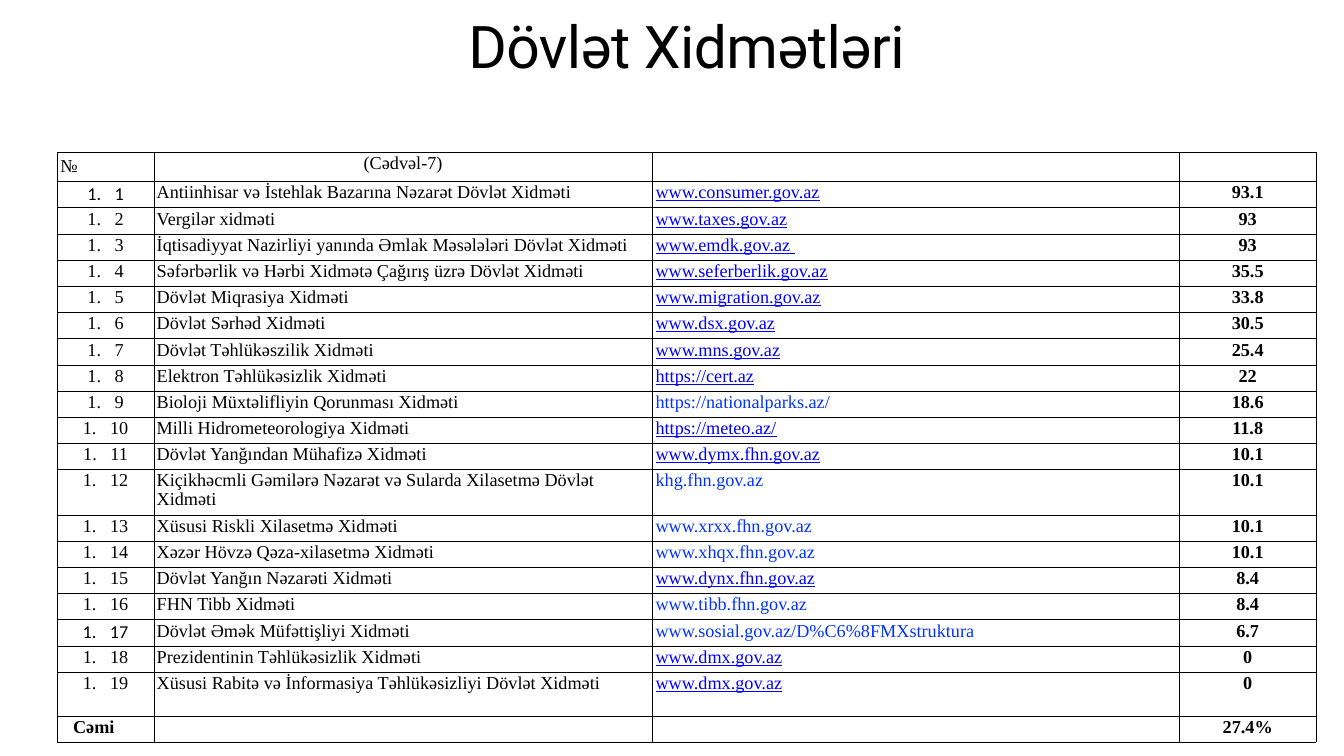
from lxml import etree
from pptx import Presentation
from pptx import util as u
from pptx.dml.color import RGBColor
from pptx.enum import text
from pptx.oxml import ns

WIDTH, HEIGHT = 26.67, 15
TITLE = "Dövlət Xidmətləri"
HEADER = ("№", "(Cədvəl-7)")
TOTAL = ("Cəmi", "27.4%")
# service, site, is the site underlined, score
SERVICES = [
    ("Antiinhisar və İstehlak Bazarına Nəzarət Dövlət Xidməti", "www.consumer.gov.az", True, "93.1"),
    ("Vergilər xidməti", "www.taxes.gov.az", True, "93"),
    ("İqtisadiyyat Nazirliyi yanında Əmlak Məsələləri Dövlət Xidməti", "www.emdk.gov.az ", True, "93"),
    ("Səfərbərlik və Hərbi Xidmətə Çağırış üzrə Dövlət Xidməti", "www.seferberlik.gov.az", True, "35.5"),
    ("Dövlət Miqrasiya Xidməti", "www.migration.gov.az", True, "33.8"),
    ("Dövlət Sərhəd Xidməti", "www.dsx.gov.az", True, "30.5"),
    ("Dövlət Təhlükəszilik Xidməti", "www.mns.gov.az", True, "25.4"),
    ("Elektron Təhlükəsizlik Xidməti", "https://cert.az", True, "22"),
    ("Bioloji Müxtəlifliyin Qorunması Xidməti", "https://nationalparks.az/", False, "18.6"),
    ("Milli Hidrometeorologiya Xidməti", "https://meteo.az/", True, "11.8"),
    ("Dövlət Yanğından Mühafizə Xidməti", "www.dymx.fhn.gov.az", True, "10.1"),
    ("Kiçikhəcmli Gəmilərə Nəzarət və Sularda Xilasetmə Dövlət Xidməti", "khg.fhn.gov.az", False, "10.1"),
    ("Xüsusi Riskli Xilasetmə Xidməti", "www.xrxx.fhn.gov.az", False, "10.1"),
    ("Xəzər Hövzə Qəza-xilasetmə Xidməti", "www.xhqx.fhn.gov.az", False, "10.1"),
    ("Dövlət Yanğın Nəzarəti Xidməti", "www.dynx.fhn.gov.az", True, "8.4"),
    ("FHN Tibb Xidməti", "www.tibb.fhn.gov.az", False, "8.4"),
    ("Dövlət Əmək Müfəttişliyi Xidməti", "www.sosial.gov.az/D%C6%8FMXstruktura", False, "6.7"),
    ("Prezidentinin Təhlükəsizlik Xidməti", "www.dmx.gov.az", True, "0"),
    ("Xüsusi Rabitə və İnformasiya Təhlükəsizliyi Dövlət Xidməti", "www.dmx.gov.az", True, "0"),
]
CALIBRI_NUMBERS = (1, 17)
COLUMNS = (1.91, 9.9, 10.45, 2.72)
ROW, TALL_ROW = 0.52, 0.87
INSET = 0.06
CENTER = text.PP_ALIGN.CENTER


def rgb(value):
    return RGBColor.from_string(value)


def write(tf, words, color="000000", align=None, spacing=0.9, **font):
    p = tf.paragraphs[0]
    p.alignment, p.line_spacing = align, spacing
    r = p.add_run()
    r.text = words
    for name, value in {"name": "Times New Roman", "size": u.Pt(26), **font}.items():
        setattr(r.font, name, value)
    r.font.color.rgb = rgb(color)
    return p


def indent(p, left, first=0):
    pPr = p._p.get_or_add_pPr()
    pPr.set("marL", str(u.Inches(left)))
    pPr.set("indent", str(u.Inches(first)))
    return pPr


def set_insets(box):
    for side in ("left", "top", "right", "bottom"):
        setattr(box, f"margin_{side}", u.Inches(INSET))


def set_borders(cell):
    tcPr = cell._tc.get_or_add_tcPr()
    for i, side in enumerate("LRTB"):
        ln = etree.Element(ns.qn(f"a:ln{side}"), w=str(u.Pt(0.5)))
        fill = etree.SubElement(ln, ns.qn("a:solidFill"))
        etree.SubElement(fill, ns.qn("a:srgbClr"), val="000000")
        tcPr.insert(i, ln)


def add_title(s):
    box = s.shapes.add_textbox(*map(u.Inches, (1.62, 0.4, 24, 1.89)))
    tf = box.text_frame
    tf.word_wrap = True
    set_insets(tf)
    p = write(tf, TITLE, align=CENTER, spacing=0.8, name="Roboto", size=u.Pt(84))
    p.runs[0].font._element.set("spc", "-80")


def add_services(s):
    heights = [ROW] * (len(SERVICES) + 2)
    heights[-2] = TALL_ROW
    table = s.shapes.add_table(
        len(heights), len(COLUMNS),
        *map(u.Inches, (1.14, 3.01, sum(COLUMNS), sum(heights)))).table
    table.first_row = table.horz_banding = False
    for column, width in zip(table.columns, COLUMNS):
        column.width = u.Inches(width)
    for row, height in zip(table.rows, heights):
        row.height = u.Inches(height)
    for cell in table.iter_cells():
        set_insets(cell)
        cell.fill.background()
        set_borders(cell)

    def tf(row, column):
        return table.cell(row, column).text_frame

    p = write(tf(0, 0), HEADER[0], spacing=1.08)
    p.space_before = u.Pt(8)
    write(tf(0, 1), HEADER[1], align=CENTER)
    for n, (service, site, underlined, score) in enumerate(SERVICES, 1):
        face = "Calibri" if n in CALIBRI_NUMBERS else "Times New Roman"
        pPr = indent(write(tf(n, 0), str(n), align=CENTER, name=face), 0.54, -0.54)
        etree.SubElement(pPr, ns.qn("a:buAutoNum"), type="arabicPeriod")
        write(tf(n, 1), service)
        write(tf(n, 2), site, "0000FF" if underlined else "0433FF", underline=underlined)
        write(tf(n, 3), score, align=CENTER, bold=True)
    last = len(heights) - 1
    indent(write(tf(last, 0), TOTAL[0], bold=True), 0.25)
    write(tf(last, 3), TOTAL[1], align=CENTER, bold=True)


def main():
    prs = Presentation()
    prs.slide_width, prs.slide_height = u.Inches(WIDTH), u.Inches(HEIGHT)
    s = prs.slides.add_slide(prs.slide_layouts[6])
    add_title(s)
    add_services(s)
    prs.save("out.pptx")


if __name__ == "__main__":
    main()
